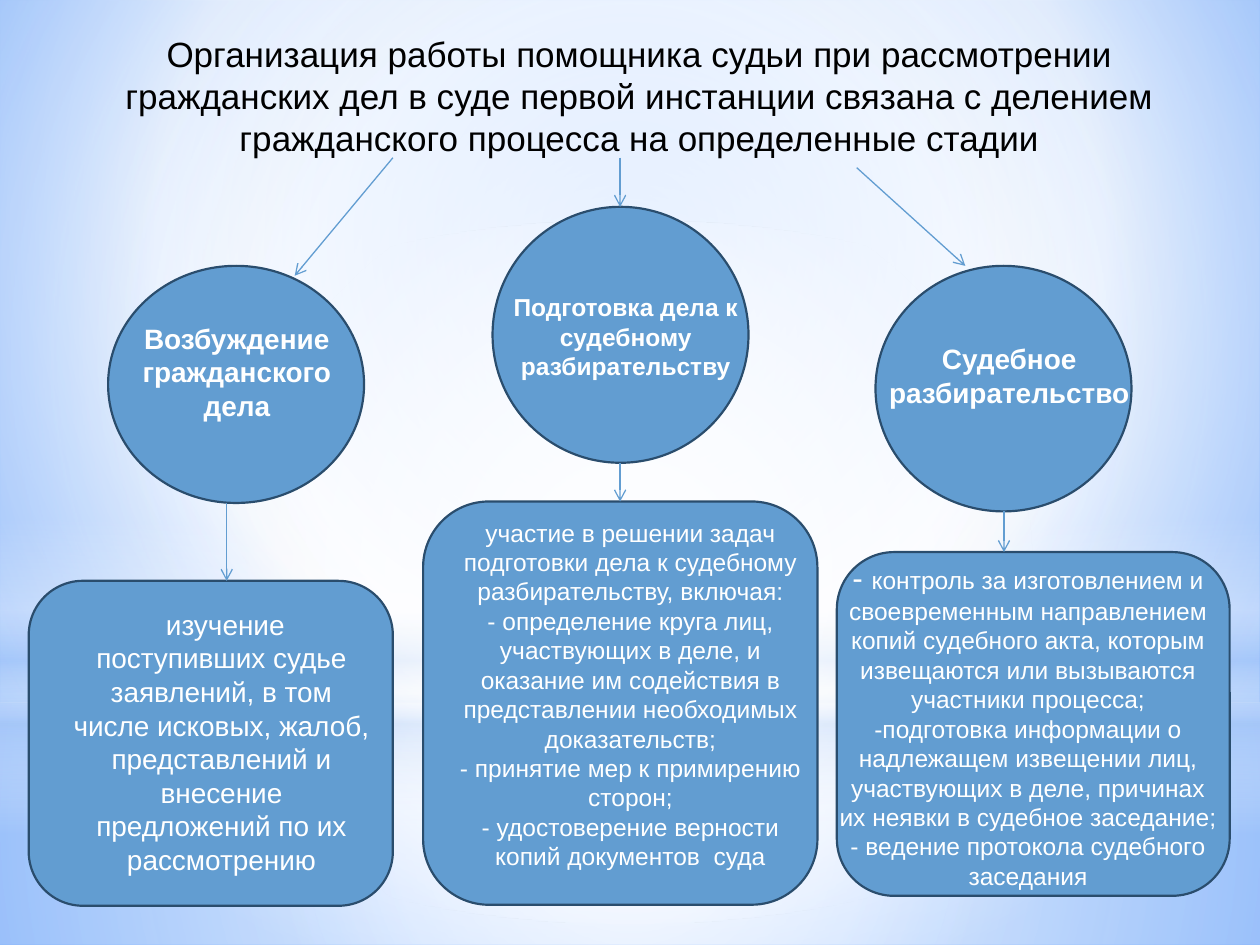
from dataclasses import dataclass
from typing import NamedTuple, Optional

from lxml.etree import SubElement
from pptx import Presentation
from pptx.dml.color import RGBColor
from pptx.enum.shapes import MSO_CONNECTOR as Connector, MSO_SHAPE as Preset
from pptx.enum.text import MSO_AUTO_SIZE as AutoSize, PP_ALIGN as Align
from pptx.oxml.ns import qn
from pptx.util import Cm, Pt


@dataclass(frozen=True)
class Theme:
    font: str = "Arial"
    fill: str = "629DD1"
    outline: str = "2A4D6D"
    ink: str = "000000"
    light: str = "FFFFFF"
    haze: str = "ACCBF9"
    sky: str = "95C0FF"
    deep_sky: str = "5599FF"
    title: int = 20
    lead: int = 18
    large: int = 16
    small: int = 14
    outline_width: float = 1.25
    arrow_width: float = 0.75


THEME = Theme()


class Box(NamedTuple):
    """Left, top, width and height in centimetres."""
    left: float
    top: float
    width: float
    height: float

    @property
    def bottom(self) -> float:
        return self.top + self.height

    def lengths(self) -> list:
        return [Cm(value) for value in self]


class Point(NamedTuple):
    x: float
    y: float


class Stop(NamedTuple):
    position: int
    color: str
    opacity: int = 100


@dataclass(frozen=True)
class Gradient:
    """Runs along an angle, or circles around a focus given as side insets."""
    stops: list[Stop]
    focus: tuple[int, int, int, int] = (50, 50, 50, 50)
    angle: Optional[int] = None


@dataclass(frozen=True)
class Wash:
    preset: Preset
    box: Box
    gradient: Gradient


@dataclass(frozen=True)
class Stage:
    circle: Box
    label_box: Box
    label: str
    label_size: int
    panel: Box
    task_box: Box
    tasks: list[str]
    task_size: int
    arrow_in: tuple[Point, Point]
    arrow_down_x: float
    lead: str = ""


BACKGROUND = Gradient(
    [Stop(0, THEME.sky), Stop(60, THEME.light), Stop(100, THEME.deep_sky)],
    (20, 10, 20, 60))

WASHES = [
    Wash(Preset.RECTANGLE, Box(0, 14.17, 25.4, 4.88), Gradient(
        [Stop(0, THEME.light, 91), Stop(37, THEME.light, 76), Stop(100, THEME.haze, 79)])),
    Wash(Preset.RECTANGLE, Box(0, 0, 25.4, 14.17), Gradient(
        [Stop(0, THEME.light, 89), Stop(48, THEME.light, 62), Stop(100, THEME.haze, 79)])),
    Wash(Preset.RECTANGLE, Box(0, 10.46, 25.4, 6.35), Gradient(
        [Stop(0, THEME.light, 0), Stop(29, THEME.light, 30), Stop(45, THEME.haze, 40),
         Stop(55, THEME.light, 26), Stop(65, THEME.haze, 60), Stop(100, THEME.light, 0)],
        angle=90)),
    Wash(Preset.OVAL, Box(0, 4.45, 25.4, 14.17), Gradient(
        [Stop(0, THEME.light), Stop(56, THEME.light, 0)])),
]

TITLE = ("Организация работы помощника судьи при рассмотрении гражданских дел в суде "
         "первой инстанции связана с делением гражданского процесса на определенные стадии")

STAGES = [
    Stage(Box(2.18, 5.36, 5.16, 4.78), Box(2.59, 6.35, 4.37, 3.07),
          "Возбуждение гражданского дела", THEME.large,
          Box(0.58, 11.71, 7.34, 6.55), Box(1.19, 12.12, 6.55, 5.74),
          [" изучение поступивших судье заявлений, в том числе исковых, жалоб, "
           "представлений и внесение предложений по их рассмотрению"], THEME.large,
          (Point(7.92, 3.18), Point(5.94, 5.56)), 4.57),
    Stage(Box(9.93, 4.17, 5.16, 5.16), Box(9.73, 5.77, 5.77, 2.82),
          "Подготовка дела к судебному разбирательству", THEME.small,
          Box(8.53, 10.11, 7.95, 8.13), Box(8.94, 10.31, 7.54, 7.44),
          ["участие в решении задач подготовки дела к судебному разбирательству, включая:",
           "- определение круга лиц, участвующих в деле, и оказание им содействия "
           "в представлении необходимых доказательств;",
           "- принятие мер к примирению сторон;",
           "- удостоверение верности копий документов  суда"], THEME.small,
          (Point(12.5, 3.18), Point(12.5, 4.17)), 12.5),
    Stage(Box(17.65, 5.36, 5.16, 4.95), Box(17.27, 6.76, 6.15, 2.39),
          "Судебное разбирательство", THEME.large,
          Box(16.87, 11.13, 7.92, 6.93), Box(16.66, 11.13, 8.13, 7.01),
          ["контроль за изготовлением и своевременным направлением копий судебного акта, "
           "которым извещаются или вызываются участники процесса;",
           "-подготовка информации о надлежащем извещении лиц, участвующих в деле, "
           "причинах их неявки в судебное заседание;",
           "- ведение протокола судебного заседания"], THEME.small,
          (Point(17.27, 3.38), Point(19.46, 5.36)), 20.24, lead="- "),
]


def rgb(color: str) -> RGBColor:
    return RGBColor.from_string(color)


def apply_gradient(fill, owner, gradient: Gradient) -> None:
    """Put a gradient in place of the solid fill inside the owner element."""
    fill.solid()
    solid = next(owner.iter(qn("a:solidFill")))
    grad = SubElement(solid.getparent(), qn("a:gradFill"), rotWithShape="1")
    solid.getparent().replace(solid, grad)
    stop_list = SubElement(grad, qn("a:gsLst"))
    for stop in gradient.stops:
        mark = SubElement(stop_list, qn("a:gs"), pos=str(stop.position * 1000))
        color = SubElement(mark, qn("a:srgbClr"), val=stop.color)
        if stop.opacity < 100:
            SubElement(color, qn("a:alpha"), val=str(stop.opacity * 1000))
    if gradient.angle is not None:
        SubElement(grad, qn("a:lin"), ang=str(gradient.angle * 60000), scaled="0")
    else:
        insets = {side: str(inset * 1000) for side, inset in zip("ltrb", gradient.focus)}
        SubElement(SubElement(grad, qn("a:path"), path="circle"),
                   qn("a:fillToRect"), **insets)


def add_wash(page, wash: Wash) -> None:
    shape = page.shapes.add_shape(wash.preset, *wash.box.lengths())
    shape.shadow.inherit = False
    apply_gradient(shape.fill, shape.element, wash.gradient)
    shape.line.fill.background()


def add_block(page, preset: Preset, box: Box) -> None:
    shape = page.shapes.add_shape(preset, *box.lengths())
    shape.shadow.inherit = False
    shape.fill.solid()
    shape.fill.fore_color.rgb = rgb(THEME.fill)
    shape.line.color.rgb = rgb(THEME.outline)
    shape.line.width = Pt(THEME.outline_width)


def add_arrow(page, start: Point, end: Point) -> None:
    arrow = page.shapes.add_connector(
        Connector.STRAIGHT, *(Cm(value) for value in (*start, *end)))
    arrow.line.color.rgb = rgb(THEME.fill)
    arrow.line.width = Pt(THEME.arrow_width)
    SubElement(arrow.line._get_or_add_ln(), qn("a:tailEnd"), type="arrow")
    SubElement(arrow.element.spPr, qn("a:effectLst"))


def format_span(span, size: int, color: str, bold: bool) -> None:
    span.font.name = THEME.font
    span.font.size = Pt(size)
    span.font.bold = bold
    span.font.color.rgb = rgb(color)


def add_text(page, box: Box, lines: list[str], size: int, color: str = THEME.light,
             bold: bool = False, lead: str = "") -> None:
    """Add centred paragraphs; a lead opens the first one in the lead size."""
    frame = page.shapes.add_textbox(*box.lengths()).text_frame
    frame.word_wrap = True
    frame.auto_size = AutoSize.SHAPE_TO_FIT_TEXT
    frame.text = "\n".join([lead or lines[0], *lines[1:]])
    if lead:
        frame.paragraphs[0].add_run().text = lines[0]
    for para in frame.paragraphs:
        para.alignment = Align.CENTER
        for span in para.runs:
            format_span(span, size, color, bold)
    if lead:
        frame.paragraphs[0].runs[0].font.size = Pt(THEME.lead)


def add_stage(page, stage: Stage) -> None:
    add_block(page, Preset.OVAL, stage.circle)
    add_block(page, Preset.ROUNDED_RECTANGLE, stage.panel)
    add_arrow(page, *stage.arrow_in)
    add_arrow(page, Point(stage.arrow_down_x, stage.circle.bottom),
              Point(stage.arrow_down_x, stage.panel.top))
    add_text(page, stage.label_box, [stage.label], stage.label_size, bold=True)
    add_text(page, stage.task_box, stage.tasks, stage.task_size, lead=stage.lead)


def main() -> None:
    deck = Presentation()
    deck.slide_width, deck.slide_height = Cm(25.4), Cm(19.05)
    page = deck.slides.add_slide(deck.slide_layouts[6])
    apply_gradient(page.background.fill, page.element, BACKGROUND)
    for wash in WASHES:
        add_wash(page, wash)
    add_text(page, Box(1.98, 0.53, 21.82, 2.82), [TITLE], THEME.title, THEME.ink)
    for stage in STAGES:
        add_stage(page, stage)
    deck.save("out.pptx")


if __name__ == "__main__":
    main()
